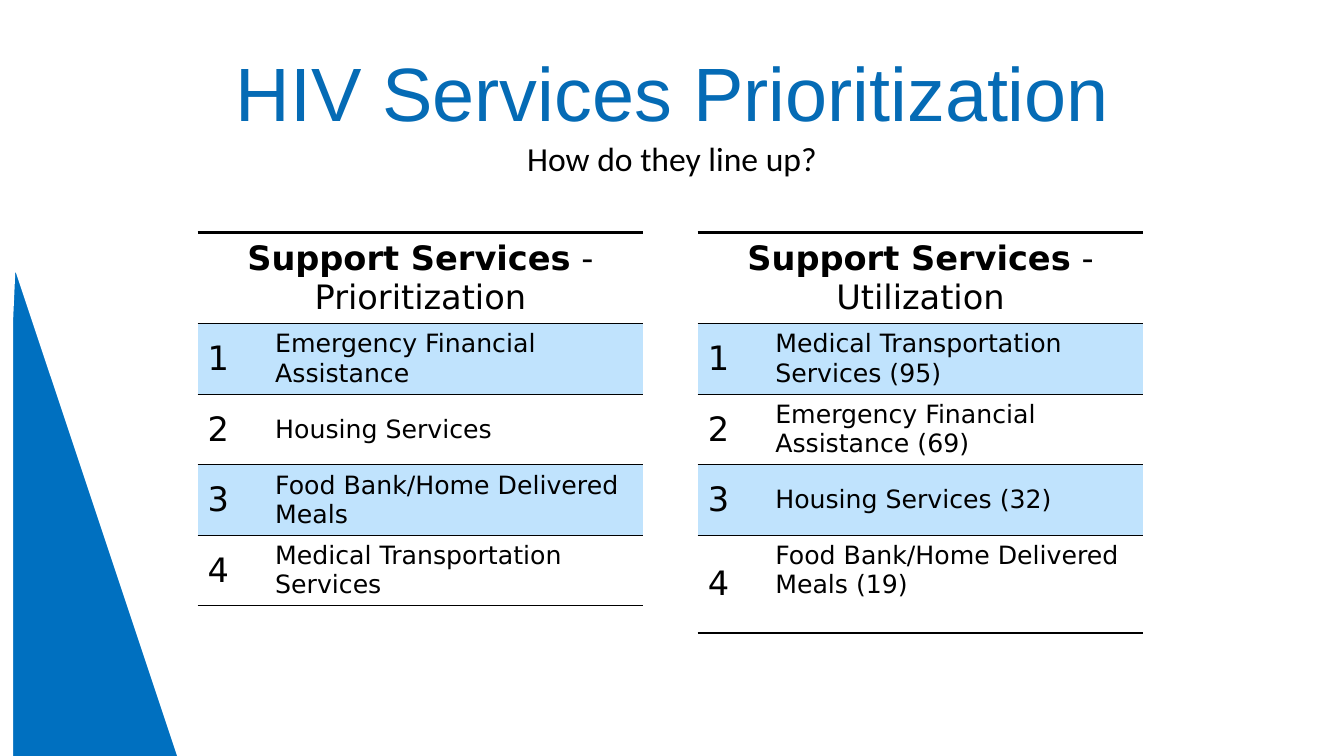
from lxml.etree import SubElement
from pptx import Presentation
from pptx.dml.color import RGBColor
from pptx.enum.text import MSO_ANCHOR, PP_ALIGN
from pptx.oxml.ns import qn
from pptx.util import Inches, Pt

TITLE_BLUE = RGBColor(0x05, 0x6B, 0xB5)
WEDGE_BLUE = RGBColor(0x00, 0x70, 0xC0)
BAND_BLUE = RGBColor(0xC0, 0xE3, 0xFD)
BLACK = RGBColor(0, 0, 0)
WHITE = RGBColor(0xFF, 0xFF, 0xFF)

PLAIN_TABLE_STYLE = "{2D5ABB26-0587-4C30-8999-92F81FD0307C}"
TABLE_TOP = 2.31
COLUMN_WIDTHS = (0.67, 3.75)
HEADER_HEIGHT = 0.9
ROW_HEIGHT = 0.7

PRIORITIZATION = (
    "Emergency Financial Assistance",
    "Housing Services",
    "Food Bank/Home Delivered Meals",
    "Medical Transportation Services",
)
UTILIZATION = (
    "Medical Transportation Services (95)",
    "Emergency Financial Assistance (69)",
    "Housing Services (32)",
    "Food Bank/Home Delivered Meals (19)",
)


def style_font(font, name, size, color):
    font.name = name
    font.size = Pt(size)
    font.color.rgb = color


def fill_placeholder(shape, box, text, font_name, size, color):
    shape.left, shape.top, shape.width, shape.height = map(Inches, box)
    shape.text_frame.text = text
    paragraph = shape.text_frame.paragraphs[0]
    paragraph.alignment = PP_ALIGN.CENTER
    paragraph.line_spacing = 0.9
    style_font(paragraph.font, font_name, size, color)
    return paragraph


def remove_bullet(paragraph):
    properties = paragraph._p.get_or_add_pPr()
    properties.set("marL", "0")
    properties.set("indent", "0")
    bullet = properties.makeelement(qn("a:buNone"), {})
    properties.insert_element_before(bullet, "a:tabLst", "a:defRPr", "a:extLst")


def add_wedge(slide):
    points = [(0.06, 3.19), (0.1, 2.31), (1.88, 7.65), (0.06, 7.67)]
    builder = slide.shapes.build_freeform(
        Inches(0.06), Inches(7.67), scale=1.0)
    builder.add_line_segments(
        [(Inches(x), Inches(y)) for x, y in points[:-1]], close=True)
    wedge = builder.convert_to_shape()
    wedge.shadow.inherit = False
    wedge.fill.solid()
    wedge.fill.fore_color.rgb = WEDGE_BLUE
    wedge.line.color.rgb = WHITE
    wedge.line.width = Pt(10)


def add_border(cell, tag, width):
    line = SubElement(cell._tc.get_or_add_tcPr(), qn(tag), w=str(Pt(width)))
    fill = SubElement(line, qn("a:solidFill"))
    SubElement(fill, qn("a:srgbClr"), val=str(BLACK))


def format_cell(cell, size, top_border=1, banded=False):
    """Set borders, then fill, the order the cell properties require."""
    add_border(cell, "a:lnT", top_border)
    add_border(cell, "a:lnB", 1)
    if banded:
        cell.fill.solid()
        cell.fill.fore_color.rgb = BAND_BLUE
    else:
        cell.fill.background()
    cell.vertical_anchor = MSO_ANCHOR.MIDDLE
    style_font(cell.text_frame.paragraphs[0].font, "DejaVu Sans", size, BLACK)


def add_ranking(slide, left, heading, services):
    height = HEADER_HEIGHT + ROW_HEIGHT * len(services)
    table = slide.shapes.add_table(
        len(services) + 1, 2, Inches(left), Inches(TABLE_TOP),
        Inches(sum(COLUMN_WIDTHS)), Inches(height)).table
    table.first_row = table.horz_banding = False
    table._tbl.tblPr.find(qn("a:tableStyleId")).text = PLAIN_TABLE_STYLE
    for column, width in zip(table.columns, COLUMN_WIDTHS):
        column.width = Inches(width)

    table.rows[0].height = Inches(HEADER_HEIGHT)
    header = table.cell(0, 0)
    header.merge(table.cell(0, 1))
    paragraph = header.text_frame.paragraphs[0]
    paragraph.alignment = PP_ALIGN.CENTER
    for text, bold in (("Support Services", True), (f" - {heading}", False)):
        run = paragraph.add_run()
        run.text = text
        run.font.bold = bold
    for cell in table.rows[0].cells:
        format_cell(cell, 24, top_border=2.25)

    for rank, service in enumerate(services, start=1):
        table.rows[rank].height = Inches(ROW_HEIGHT)
        for column, (text, size) in enumerate(((str(rank), 24), (service, 18))):
            cell = table.cell(rank, column)
            cell.text = text
            format_cell(cell, size, banded=rank % 2 == 1)
    return table


def main():
    presentation = Presentation()
    presentation.slide_width = Inches(13.33)
    presentation.slide_height = Inches(7.5)
    slide = presentation.slides.add_slide(presentation.slide_layouts[1])

    title = fill_placeholder(
        slide.shapes.title, (0.92, 0.24, 11.5, 1.45),
        "HIV Services Prioritization", "Arial", 54, TITLE_BLUE)
    title.space_before = Pt(0)
    slide.shapes.title.text_frame.vertical_anchor = MSO_ANCHOR.MIDDLE
    subtitle = fill_placeholder(
        slide.placeholders[1], (0.97, 1.36, 11.39, 0.65),
        "How do they line up?", "Calibri", 24, BLACK)
    subtitle.space_before = Pt(10)
    remove_bullet(subtitle)

    add_wedge(slide)
    add_ranking(slide, 1.96, "Prioritization", PRIORITIZATION)
    utilization = add_ranking(slide, 6.92, "Utilization", UTILIZATION)
    utilization.rows[4].height = Inches(0.97)
    utilization.cell(4, 1).margin_bottom = Inches(0.33)

    presentation.save("out.pptx")


if __name__ == "__main__":
    main()
